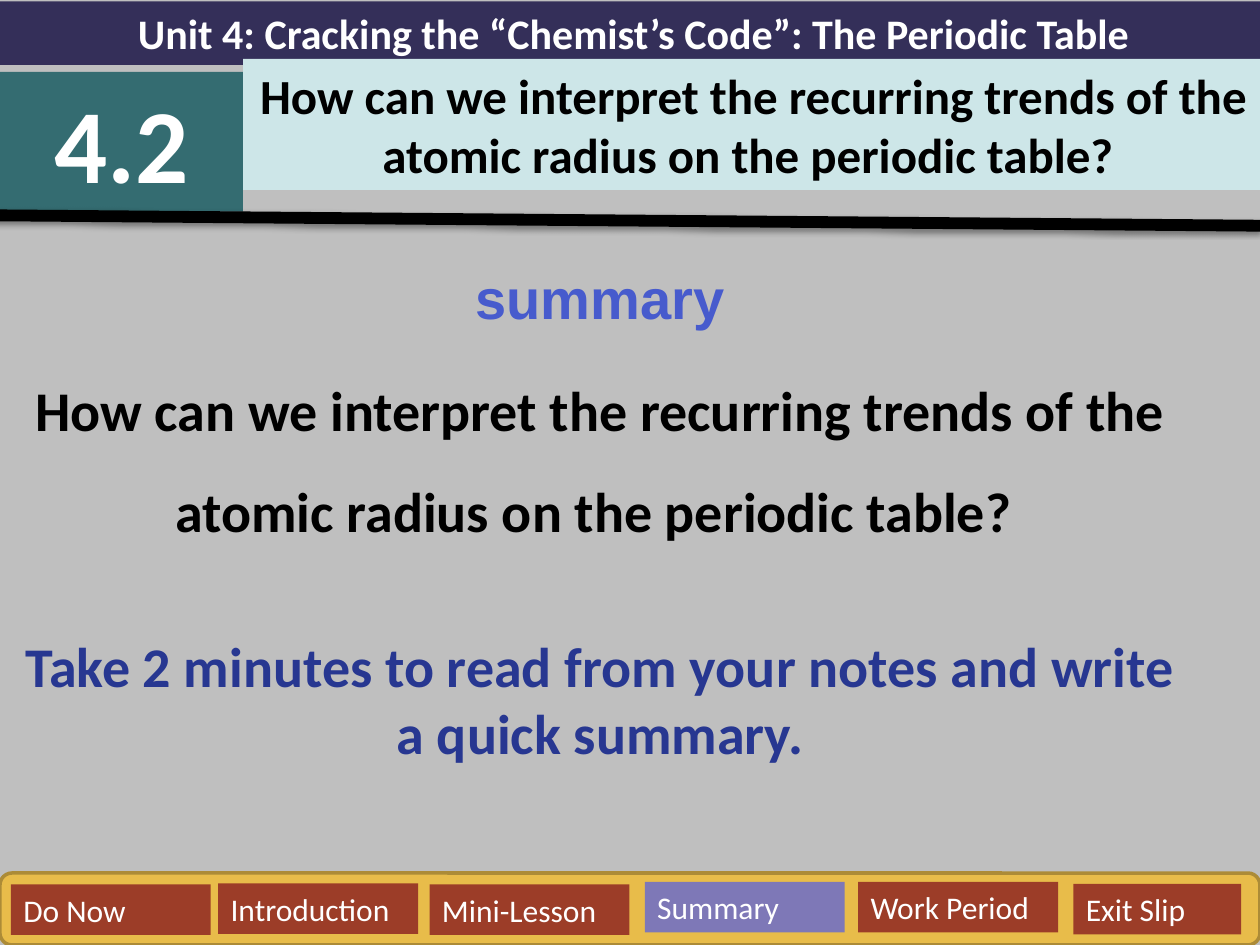
from dataclasses import dataclass

from lxml.etree import SubElement
from pptx import Presentation
from pptx.dml.color import RGBColor
from pptx.enum.shapes import MSO_CONNECTOR, MSO_SHAPE
from pptx.enum.text import MSO_ANCHOR, PP_ALIGN
from pptx.oxml.ns import qn
from pptx.util import Cm, Pt


@dataclass(frozen=True)
class Theme:
    back: str = "BFBFBF"
    white: str = "FFFFFF"
    black: str = "000000"
    navy: str = "342F59"
    teal: str = "346C71"
    pale: str = "CDE6E8"
    gold: str = "E8BC4A"
    edge: str = "AC8B37"
    rust: str = "9C3D28"
    violet: str = "7E78B7"
    blue: str = "475BCD"
    ink: str = "273791"
    font: str = "Calibri"
    head: str = "Arial"
    unit: int = 24
    lesson: int = 60
    title: int = 28
    body: int = 32
    tab: int = 18


THEME = Theme()
ASK = ("How can we interpret the recurring trends of the atomic radius "
       "on the periodic table? ")


def rgb(code):
    return RGBColor.from_string(code)


def apply(item, form):
    for key, value in form.items():
        setattr(item, key, value)


def write(para, text, size, color, bold=True, font=THEME.font, **form):
    """Fill one paragraph with a single styled run."""
    apply(para, form)
    run = para.add_run()
    run.text = text
    apply(run.font, {"name": font, "size": Pt(size), "bold": bold})
    run.font.color.rgb = rgb(color)


def panel(slide, box, fill, kind=MSO_SHAPE.RECTANGLE, edge=None):
    """Draw a flat filled shape."""
    shape = slide.shapes.add_shape(kind, *map(Cm, box))
    shape.shadow.inherit = False
    shape.fill.solid()
    shape.fill.fore_color.rgb = rgb(fill)
    if edge:
        shape.line.color.rgb = rgb(edge)
        shape.line.width = Pt(2)
    else:
        shape.line.fill.background()
    return shape


def label(slide, box, fill, text, size, color=THEME.white, bold=True,
          align=PP_ALIGN.CENTER):
    """Draw a panel with text at its top."""
    frame = panel(slide, box, fill).text_frame
    apply(frame, {"word_wrap": True, "vertical_anchor": MSO_ANCHOR.TOP})
    write(frame.paragraphs[0], text, size, color, bold, alignment=align)


def rule(slide, start, end):
    """Draw the thick line with its soft shadow."""
    line = slide.shapes.add_connector(MSO_CONNECTOR.STRAIGHT,
                                      *map(Cm, start + end))
    line.line.color.rgb = rgb(THEME.black)
    line.line.width = Pt(6.75)
    effect = SubElement(line._element.spPr, qn("a:effectLst"))
    shade = SubElement(effect, qn("a:outerShdw"), blurRad=str(Pt(3.1)),
                       dist=str(Pt(1.6)), dir="5400000", rotWithShape="0")
    tint = SubElement(shade, qn("a:srgbClr"), val=THEME.black)
    SubElement(tint, qn("a:alpha"), val="38000")


def body(slide, box):
    """Write the summary task."""
    frame = slide.shapes.add_textbox(*map(Cm, box)).text_frame
    frame.word_wrap = True
    rows = [
        ("summary", THEME.blue, THEME.head, 1.5, 6.4),
        (ASK, THEME.black, THEME.font, 1.5, 6.4),
        ("Take 2 minutes to read from your notes and write a quick summary.",
         THEME.ink, THEME.font, 1.0, 50),
    ]
    for num, (text, color, font, space, gap) in enumerate(rows):
        para = frame.add_paragraph() if num else frame.paragraphs[0]
        write(para, text, THEME.body, color, font=font,
              alignment=PP_ALIGN.CENTER, line_spacing=space,
              space_before=Pt(gap))


def tabs(slide):
    """Draw the lesson steps, with the current one in violet."""
    panel(slide, (0, 17.6, 25.4, 1.45), THEME.gold,
          MSO_SHAPE.ROUNDED_RECTANGLE, THEME.edge)
    steps = [
        ("Do Now", 0.22, 17.83, 4.03),
        ("Introduction", 4.4, 17.81, 4.03),
        ("Mini-Lesson", 8.66, 17.83, 4.03),
        ("Summary", 13, 17.78, 4.03),
        ("Work Period", 17.3, 17.78, 4.03),
        ("Exit Slip", 21.64, 17.82, 3.38),
    ]
    for text, left, top, width in steps:
        fill = THEME.violet if text == "Summary" else THEME.rust
        label(slide, (left, top, width, 1.02), fill, text, THEME.tab,
              bold=False, align=PP_ALIGN.LEFT)


def main():
    deck = Presentation()
    apply(deck, {"slide_width": Cm(25.4), "slide_height": Cm(19.05)})
    slide = deck.slides.add_slide(deck.slide_layouts[6])
    slide.background.fill.solid()
    slide.background.fill.fore_color.rgb = rgb(THEME.back)

    # Task
    body(slide, (0, 4.52, 24.2, 12.62))

    # Header
    label(slide, (0, 0.03, 25.55, 1.28), THEME.navy,
          "Unit 4: Cracking the “Chemist’s Code”: The Periodic Table",
          THEME.unit)
    label(slide, (0, 1.45, 4.9, 2.82), THEME.teal, "4.2", THEME.lesson)
    label(slide, (4.9, 1.19, 20.57, 2.64), THEME.pale, ASK, THEME.title,
          THEME.black)
    rule(slide, (-0.13, 4.34), (25.4, 4.55))

    # Footer
    tabs(slide)
    deck.save("out.pptx")


if __name__ == "__main__":
    main()
